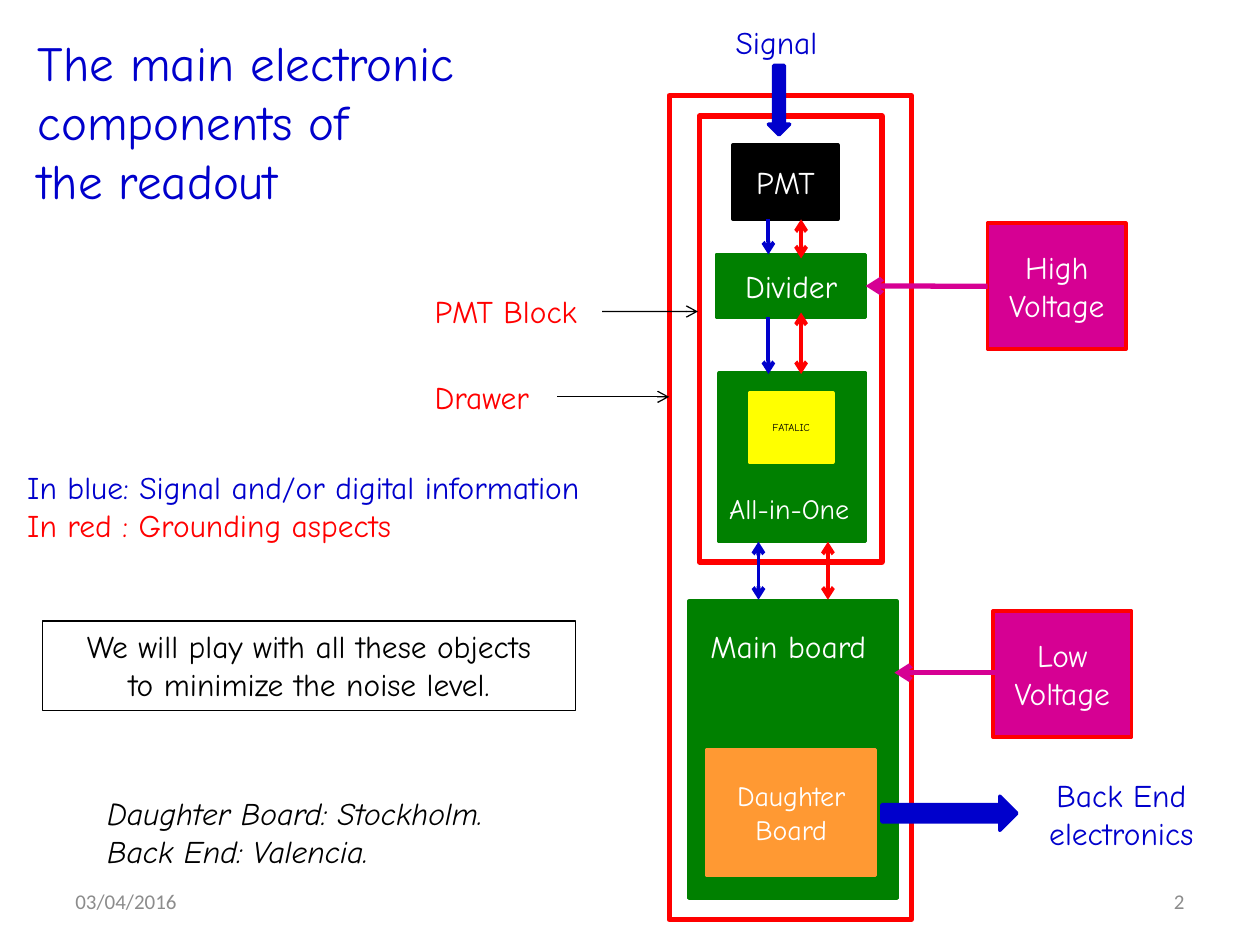
from lxml import etree
from pptx import Presentation
from pptx.dml.color import RGBColor
from pptx.enum.shapes import MSO_CONNECTOR, MSO_SHAPE
from pptx.enum.text import MSO_ANCHOR as Anchor, MSO_AUTO_SIZE as AutoSize, PP_ALIGN as Align
from pptx.oxml.ns import qn
from pptx.util import Cm, Pt

BLACK = RGBColor(0x00, 0x00, 0x00)
WHITE = RGBColor(0xFF, 0xFF, 0xFF)
GREY = RGBColor(0x8C, 0x8C, 0x8C)
BLUE = RGBColor(0x00, 0x00, 0xCC)
RED = RGBColor(0xFF, 0x00, 0x00)
GREEN = RGBColor(0x00, 0x80, 0x00)
YELLOW = RGBColor(0xFF, 0xFF, 0x00)
ORANGE = RGBColor(0xFF, 0x99, 0x33)
PINK = RGBColor(0xD6, 0x00, 0x93)
LEFT, RIGHT = 1, 3  # connection sites of a rectangle


class Sketch:
    """Holds the text style and the page being drawn."""

    def __init__(self, page, font="Comic Neue"):
        self.page = page
        self.font = font

    def fill_text(self, frame, lines, color, size, align, font=None, italic=None):
        for index, line in enumerate(lines):
            para = frame.paragraphs[0] if index == 0 else frame.add_paragraph()
            para.text = line
            para.alignment = align
            para.font.name = font or self.font
            para.font.size = Pt(size)
            para.font.color.rgb = color
            para.font.italic = italic

    def title(self, place, lines, color, size):
        box = self.page.shapes.title
        box.left, box.top, box.width, box.height = map(Cm, place)
        box.text_frame.vertical_anchor = Anchor.TOP
        box.text_frame.auto_size = AutoSize.SHAPE_TO_FIT_TEXT
        self.fill_text(box.text_frame, lines, color, size, Align.LEFT)

    def text(self, place, lines, color, size=18, align=Align.LEFT,
             wrap=False, anchor=Anchor.TOP, **style):
        box = self.page.shapes.add_textbox(*map(Cm, place))
        box.text_frame.word_wrap = wrap
        box.text_frame.vertical_anchor = anchor
        if anchor == Anchor.TOP:
            box.text_frame.auto_size = AutoSize.SHAPE_TO_FIT_TEXT
        self.fill_text(box.text_frame, lines, color, size, align, **style)
        return box

    def block(self, place, fill, lines=(), line=None, width=2, color=WHITE,
              size=18, kind=MSO_SHAPE.RECTANGLE):
        box = self.page.shapes.add_shape(kind, *map(Cm, place))
        box.shadow.inherit = False
        if fill is None:
            box.fill.background()
        else:
            box.fill.solid()
            box.fill.fore_color.rgb = fill
        box.line.color.rgb = line or fill
        box.line.width = Pt(width)
        box.text_frame.vertical_anchor = Anchor.MIDDLE
        self.fill_text(box.text_frame, lines, color, size, Align.CENTER)
        return box

    def arrow(self, start, end, color, width, double=False, source=None, target=None):
        link = self.page.shapes.add_connector(
            MSO_CONNECTOR.STRAIGHT, *map(Cm, start + end))
        if source is not None:
            link.begin_connect(*source)
        if target is not None:
            link.end_connect(*target)
        link.line.color.rgb = color
        link.line.width = Pt(width)
        outline = link._element.spPr.find(qn("a:ln"))
        for tag in ("a:headEnd", "a:tailEnd") if double else ("a:tailEnd",):
            etree.SubElement(outline, qn(tag), type="arrow")
        etree.SubElement(link._element.spPr, qn("a:effectLst"))


def main():
    deck = Presentation()
    deck.slide_width, deck.slide_height = Cm(25.4), Cm(19.05)
    sketch = Sketch(deck.slides.add_slide(deck.slide_layouts[5]))

    # Title, date and page number
    sketch.title((0.51, 0.53, 10.21, 3.84),
                 ["The main electronic", "components of", "the readout"], BLUE, 28)
    for left, label, align in ((1.27, "03/04/2016", Align.LEFT), (18.21, "2", Align.RIGHT)):
        sketch.text((left, 17.65, 5.92, 1.02), [label], GREY, 12, align,
                    wrap=True, anchor=Anchor.MIDDLE, font="Calibri")

    # Readout chain, from the tube down to the daughter board
    sketch.block((14.78, 2.92, 2.11, 1.5), BLACK, ["PMT"])
    divider = sketch.block((14.45, 5.13, 3, 1.27), GREEN, ["Divider"])
    sketch.block((14.5, 7.52, 2.95, 3.4), GREEN)
    sketch.block((15.11, 7.92, 1.68, 1.4), YELLOW, ["FATALIC"], color=BLACK, size=6)
    sketch.text((14.45, 9.78, 3.23, 0.94), ["All-in-One"], WHITE, 16)
    sketch.block((13.89, 12.12, 4.19, 5.99), GREEN)
    sketch.text((14.07, 12.52, 3.84, 1.02), ["Main board"], WHITE)
    sketch.block((14.25, 15.11, 3.4, 2.54), ORANGE, ["Daughter", "Board"], size=16)

    # Frames of the PMT block and the drawer
    sketch.block((14.1, 2.34, 3.68, 8.99), None, line=RED, width=3)
    sketch.block((13.49, 1.93, 4.88, 16.61), None, line=RED, width=3)

    # Vertical links: blue for signals, red for grounding
    for x, top, bottom, color, double in (
            (15.49, 4.42, 5.13, BLUE, False),
            (15.49, 6.4, 7.54, BLUE, False),
            (15.29, 10.92, 12.09, BLUE, True),
            (16.15, 4.42, 5.21, RED, True),
            (16.15, 6.3, 7.54, RED, True),
            (16.69, 10.92, 12.09, RED, True)):
        sketch.arrow((x, top), (x, bottom), color, 2.25, double)

    # Signal input and back-end output
    sketch.text((14.58, 0.33, 2.31, 1.02), ["Signal"], BLUE)
    sketch.block((15.49, 1.32, 0.43, 1.4), BLUE, kind=MSO_SHAPE.DOWN_ARROW)
    sketch.block((17.78, 16.05, 2.72, 0.69), BLUE, kind=MSO_SHAPE.RIGHT_ARROW)
    sketch.text((20.7, 15.52, 3.81, 1.8), ["Back End", "electronics"], BLUE,
                align=Align.CENTER)

    # Frame labels with pointers
    for label, top, width, tip in (("PMT Block", 5.77, 3.63, 14.07),
                                   ("Drawer", 7.49, 2.72, 13.49)):
        name = sketch.text((8.51, top, width, 1.02), [label], RED)
        middle = top + 0.51
        sketch.arrow((8.51 + width, middle), (tip, middle), BLACK, 0.75,
                     source=(name, RIGHT))

    # Power supplies
    sketch.block((20.02, 12.32, 2.79, 2.54), PINK, ["Low", "Voltage"], line=RED)
    high = sketch.block((19.91, 4.5, 2.79, 2.54), PINK, ["High", "Voltage"], line=RED)
    sketch.arrow((19.91, 5.77), (17.45, 5.77), PINK, 3,
                 source=(high, LEFT), target=(divider, RIGHT))
    sketch.arrow((20.5, 13.56), (18.03, 13.56), PINK, 3)

    # Colour legend
    legend = sketch.text((0.3, 9.32, 12.75, 1.8),
                         ["In blue: Signal and/or digital information",
                          "In red : Grounding aspects"], BLUE)
    legend.text_frame.paragraphs[1].font.color.rgb = RED

    # Remarks
    remark = sketch.text((0.86, 12.52, 10.74, 1.8),
                         ["We will play with all these objects",
                          "to minimize the noise level."], BLACK, align=Align.CENTER)
    remark.line.color.rgb = BLACK
    remark.line.width = Pt(0.75)
    sketch.text((1.91, 15.88, 8.94, 1.8),
                ["Daughter Board: Stockholm.", "Back End: Valencia."], BLACK, italic=True)

    deck.save("out.pptx")


if __name__ == "__main__":
    main()
